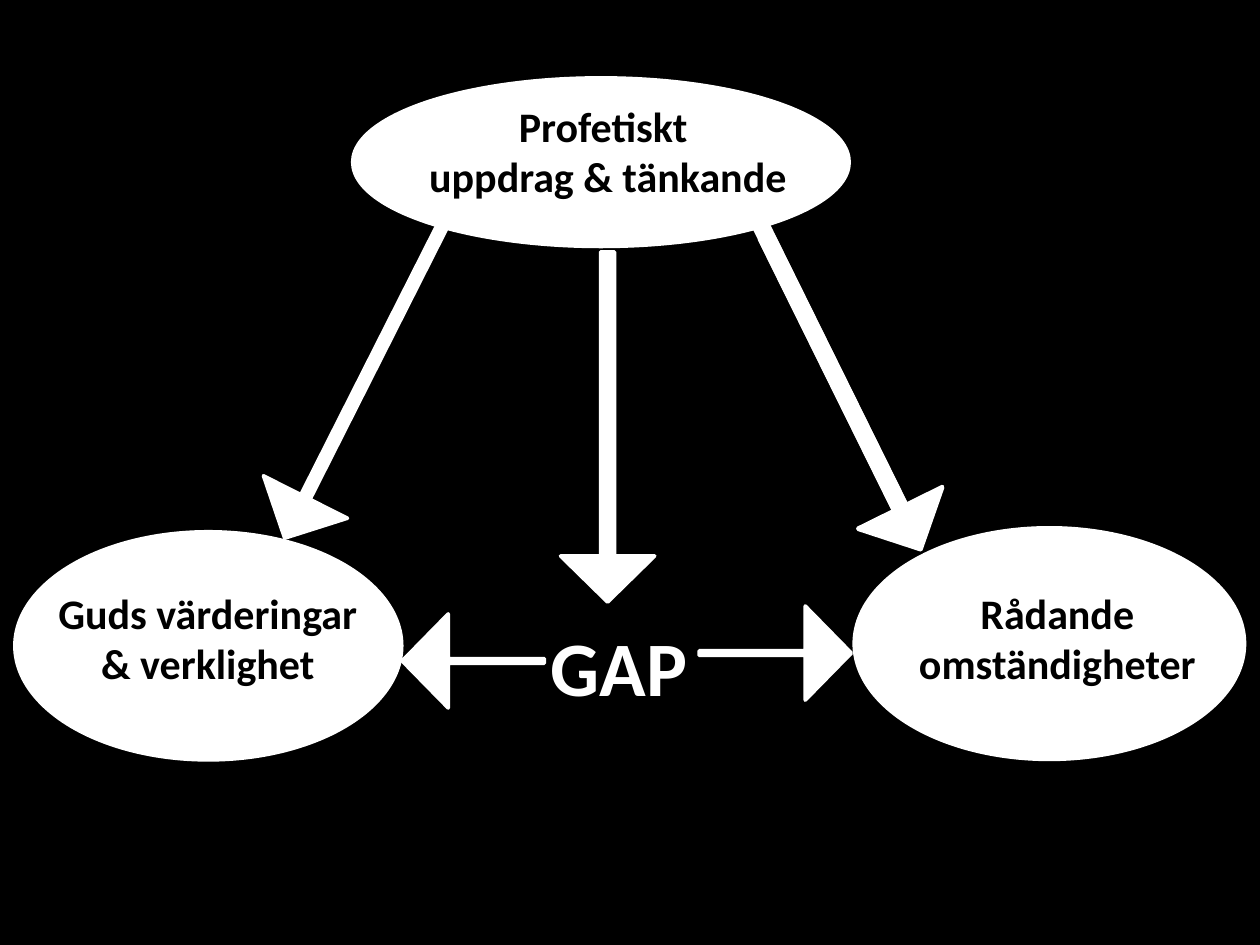
from lxml import etree
from pptx import Presentation
from pptx.dml.color import RGBColor
from pptx.enum.shapes import MSO_SHAPE
from pptx.enum.text import MSO_AUTO_SIZE, PP_ALIGN
from pptx.oxml.ns import qn
from pptx.util import Cm, Pt

ELLIPSE = MSO_SHAPE.OVAL
DOWN_ARROW = MSO_SHAPE.DOWN_ARROW
LEFT = PP_ALIGN.LEFT
CENTER = PP_ALIGN.CENTER
FIT_SHAPE = MSO_AUTO_SIZE.SHAPE_TO_FIT_TEXT

BLACK = "000000"
WHITE = "FFFFFF"


def color(hex_code):
    return RGBColor.from_string(hex_code)


class Diagram:
    """Holds the slide and the shared look of its elements."""

    font = "Calibri"
    outline = Pt(2)
    arrow_width = 1.9
    head_ratio = 0.49

    def __init__(self, slide):
        self.slide = slide
        fill = slide.background.fill
        fill.solid()
        fill.fore_color.rgb = color(BLACK)

    def white_shape(self, kind, left, top, width, height):
        shape = self.slide.shapes.add_shape(
            kind, Cm(left), Cm(top), Cm(width), Cm(height))
        shape.shadow.inherit = False
        shape.fill.solid()
        shape.fill.fore_color.rgb = color(WHITE)
        shape.line.color.rgb = color(WHITE)
        shape.line.width = self.outline
        etree.SubElement(shape._element.spPr.find(qn("a:ln")), qn("a:round"))
        return shape

    def ellipse(self, left, top, width, height):
        return self.white_shape(ELLIPSE, left, top, width, height)

    def arrow(self, left, top, length, rotation, shaft_ratio):
        """Add a block arrow that points down before it is rotated."""
        arrow = self.white_shape(DOWN_ARROW, left, top, self.arrow_width, length)
        arrow.adjustments[0] = shaft_ratio
        arrow.adjustments[1] = self.head_ratio
        arrow.rotation = rotation
        return arrow

    def label(self, text, left, top, width, height, size=24, ink=BLACK, align=CENTER):
        box = self.slide.shapes.add_textbox(Cm(left), Cm(top), Cm(width), Cm(height))
        frame = box.text_frame
        frame.word_wrap = True
        frame.auto_size = FIT_SHAPE
        frame.text = text
        for paragraph in frame.paragraphs:
            paragraph.alignment = align
            for run in paragraph.runs:
                run.font.name = self.font
                run.font.size = Pt(size)
                run.font.bold = True
                run.font.color.rgb = color(ink)
        return box


def main():
    prs = Presentation()
    prs.slide_width = Cm(25.4)
    prs.slide_height = Cm(19.05)
    diagram = Diagram(prs.slides.add_slide(prs.slide_layouts[6]))

    diagram.ellipse(7.11, 1.57, 10.01, 3.4)
    diagram.ellipse(0.3, 10.72, 7.8, 4.6)
    diagram.ellipse(17.22, 10.64, 7.87, 4.67)

    diagram.label("GAP", 10.85, 12.37, 3.81, 2.13, size=44, ink=WHITE, align=LEFT)

    arrows = [
        # left, top, length, rotation, shaft ratio
        (15.95, 3.96, 7.49, 333.7, 0.15),
        (6.38, 4.17, 7.06, 26.8, 0.11),
        (16.05, 4.39, 7.06, 333.7, 0.15),
        (11.3, 5.08, 7.06, 0, 0.15),
        (14.68, 11.63, 3.07, 270, 0.05),
        (8.59, 11.89, 2.87, 90, 0.05),
    ]
    for arrow in arrows:
        diagram.arrow(*arrow)

    diagram.label("Profetiskt \nuppdrag & tänkande", 7.95, 1.9, 8.61, 3.07)
    diagram.label("Guds värderingar & verklighet", 0.89, 11.71, 6.6, 2.31)
    diagram.label("Rådande omständigheter", 17.91, 11.71, 6.81, 2.31)

    prs.save("out.pptx")


if __name__ == "__main__":
    main()
